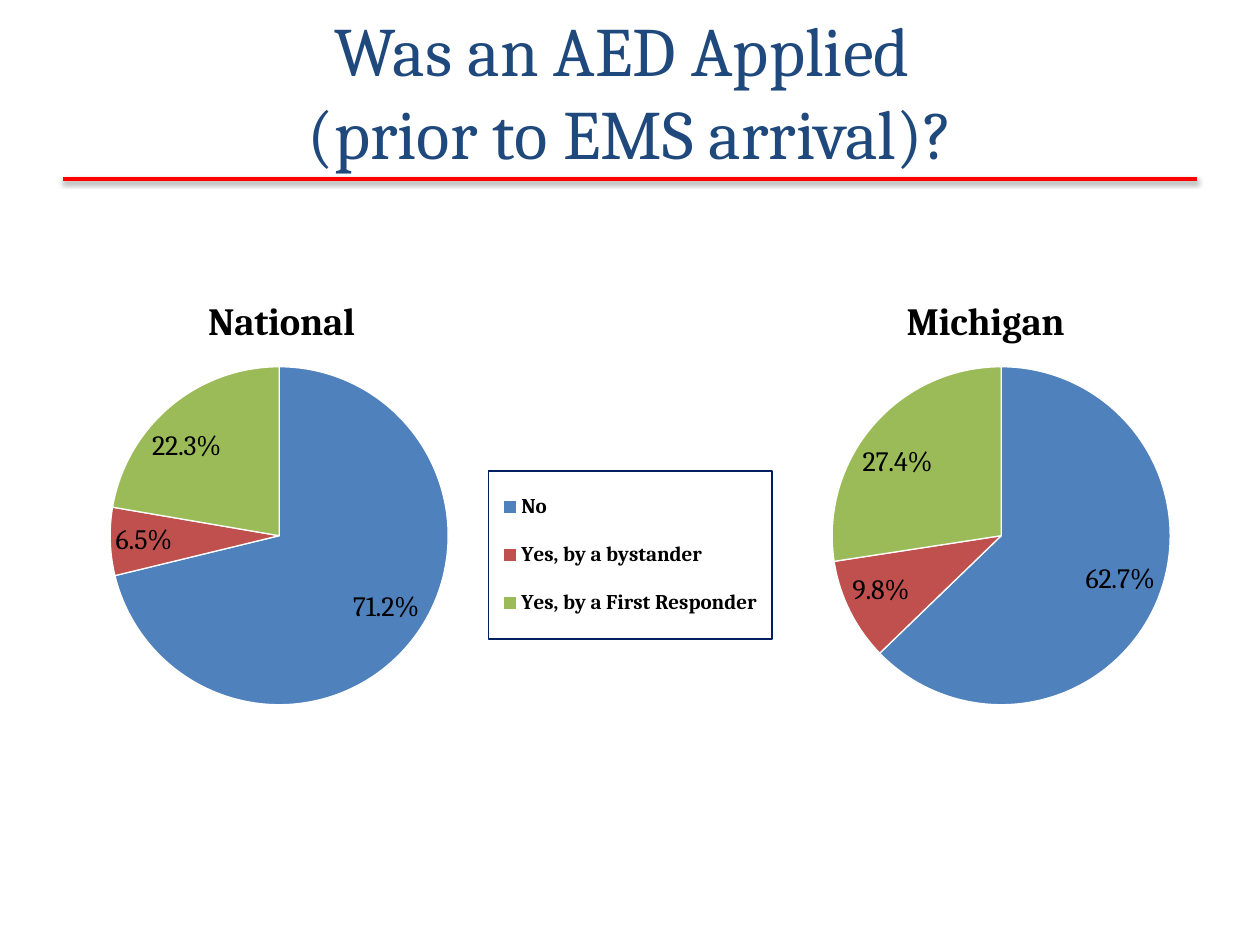
from pptx import Presentation
from pptx.chart.data import CategoryChartData
from pptx.dml.color import RGBColor
from pptx.enum.chart import XL_CHART_TYPE, XL_LABEL_POSITION, XL_LEGEND_POSITION
from pptx.enum.shapes import MSO_CONNECTOR
from pptx.enum.text import MSO_ANCHOR, PP_ALIGN
from pptx.oxml import parse_xml
from pptx.oxml.ns import nsdecls
from pptx.util import Inches, Pt

FONT = "Cambria"
NAVY = RGBColor(0x1F, 0x49, 0x7D)
RED = RGBColor(0xFF, 0x00, 0x00)
BLACK = RGBColor(0x00, 0x00, 0x00)
WHITE = RGBColor(0xFF, 0xFF, 0xFF)
LEGEND_BORDER = RGBColor(0x00, 0x20, 0x60)
ANSWER_COLORS = [
    RGBColor(0x4F, 0x81, 0xBD),
    RGBColor(0xC0, 0x50, 0x4D),
    RGBColor(0x9B, 0xBB, 0x59),
]
ANSWERS = ["No", "Yes, by a bystander", "Yes, by a First Responder"]

PIE_WIDTH, PIE_HEIGHT = Inches(6.25), Inches(4.95)
PIE_TOP = Inches(1.56)


def style_font(font, size, color=BLACK, bold=False):
    font.name = FONT
    font.size = Pt(size)
    font.bold = bold
    font.color.rgb = color


def add_heading(slide, left, top, width, height):
    heading = slide.shapes.title
    heading.left, heading.top, heading.width, heading.height = left, top, width, height
    frame = heading.text_frame
    frame.text = "Was an AED Applied \v(prior to EMS arrival)?"
    frame.vertical_anchor = MSO_ANCHOR.MIDDLE
    paragraph = frame.paragraphs[0]
    paragraph.alignment = PP_ALIGN.CENTER
    for run in paragraph.runs:
        style_font(run.font, 39.6, NAVY)


def add_rule(slide, left, top, width):
    rule = slide.shapes.add_connector(MSO_CONNECTOR.STRAIGHT, left, top, left + width, top)
    rule.line.color.rgb = RED
    rule.line.width = Pt(2)
    # Soft shadow straight below the line
    rule.element.spPr.append(parse_xml(
        f'<a:effectLst {nsdecls("a")}>'
        f'<a:outerShdw blurRad="{Pt(3.1)}" dist="{Pt(1.6)}" dir="5400000" rotWithShape="0">'
        '<a:srgbClr val="000000"><a:alpha val="38000"/></a:srgbClr>'
        '</a:outerShdw></a:effectLst>'))


def set_layout(part, index, x, y, width=None, height=None, inner=False):
    """Place a chart part by fractions of the chart frame."""
    for old_layout in part.xpath("c:layout"):
        part.remove(old_layout)
    target = '<c:layoutTarget val="inner"/>' if inner else ""
    size = f'<c:w val="{width}"/><c:h val="{height}"/>' if width else ""
    part.insert(index, parse_xml(
        f'<c:layout {nsdecls("c")}><c:manualLayout>{target}'
        '<c:xMode val="edge"/><c:yMode val="edge"/>'
        f'<c:x val="{x}"/><c:y val="{y}"/>{size}</c:manualLayout></c:layout>'))


def add_legend(chart):
    chart.has_legend = True
    chart.legend.position = XL_LEGEND_POSITION.RIGHT
    chart.legend.include_in_layout = False
    style_font(chart.legend.font, 12, bold=True)
    legend = chart.element.xpath(".//c:legend")[0]
    set_layout(legend, 1, 0.635, 0.44, 0.36, 0.27)
    legend.xpath("c:overlay")[0].addnext(parse_xml(
        f'<c:spPr {nsdecls("c", "a")}><a:ln w="{Pt(1)}"><a:solidFill>'
        f'<a:srgbClr val="{LEGEND_BORDER}"/></a:solidFill></a:ln></c:spPr>'))


def add_pie(slide, left, top, width, height, region, shares, title_xy, legend=False):
    data = CategoryChartData()
    data.categories = ANSWERS
    data.add_series("Series 1", shares)
    chart = slide.shapes.add_chart(XL_CHART_TYPE.PIE, left, top, width, height, data).chart
    style_font(chart.font, 18)

    # Region name above the pie
    chart.has_title = True
    chart.chart_title.text_frame.text = region
    style_font(chart.chart_title.text_frame.paragraphs[0].runs[0].font, 22, bold=True)
    set_layout(chart.element.xpath("./c:chart/c:title")[0], 1, *title_xy)
    set_layout(chart.element.xpath(".//c:plotArea")[0], 0, 0.095, 0.273, 0.548, 0.542, inner=True)

    # Slices and their percentages
    plot = chart.plots[0]
    plot.vary_by_categories = True
    for index, color in enumerate(ANSWER_COLORS):
        slice_format = plot.series[0].points[index].format
        slice_format.fill.solid()
        slice_format.fill.fore_color.rgb = color
        slice_format.line.color.rgb = WHITE
        slice_format.line.width = Pt(0.75)
    plot.has_data_labels = True
    labels = plot.data_labels
    labels.show_value = True
    labels.number_format = '0.0"%"'
    labels.number_format_is_linked = False
    labels.position = XL_LABEL_POSITION.BEST_FIT
    style_font(labels.font, 16)

    chart.has_legend = False
    if legend:
        add_legend(chart)


def main():
    presentation = Presentation()
    presentation.slide_width, presentation.slide_height = Inches(10), Inches(7.5)
    slide = presentation.slides.add_slide(presentation.slide_layouts[5])
    add_rule(slide, Inches(0.5), Inches(1.42), Inches(9))
    add_heading(slide, Inches(0.5), Inches(0.09), Inches(9), Inches(1.25))
    add_pie(slide, Inches(-0.09), PIE_TOP, PIE_WIDTH, PIE_HEIGHT,
            "National", [71.2, 6.5, 22.3], (0.27, 0.15), legend=True)
    add_pie(slide, Inches(5.64), PIE_TOP, PIE_WIDTH, PIE_HEIGHT,
            "Michigan", [62.7, 9.8, 27.4], (0.24, 0.15))
    presentation.save("out.pptx")


if __name__ == "__main__":
    main()
